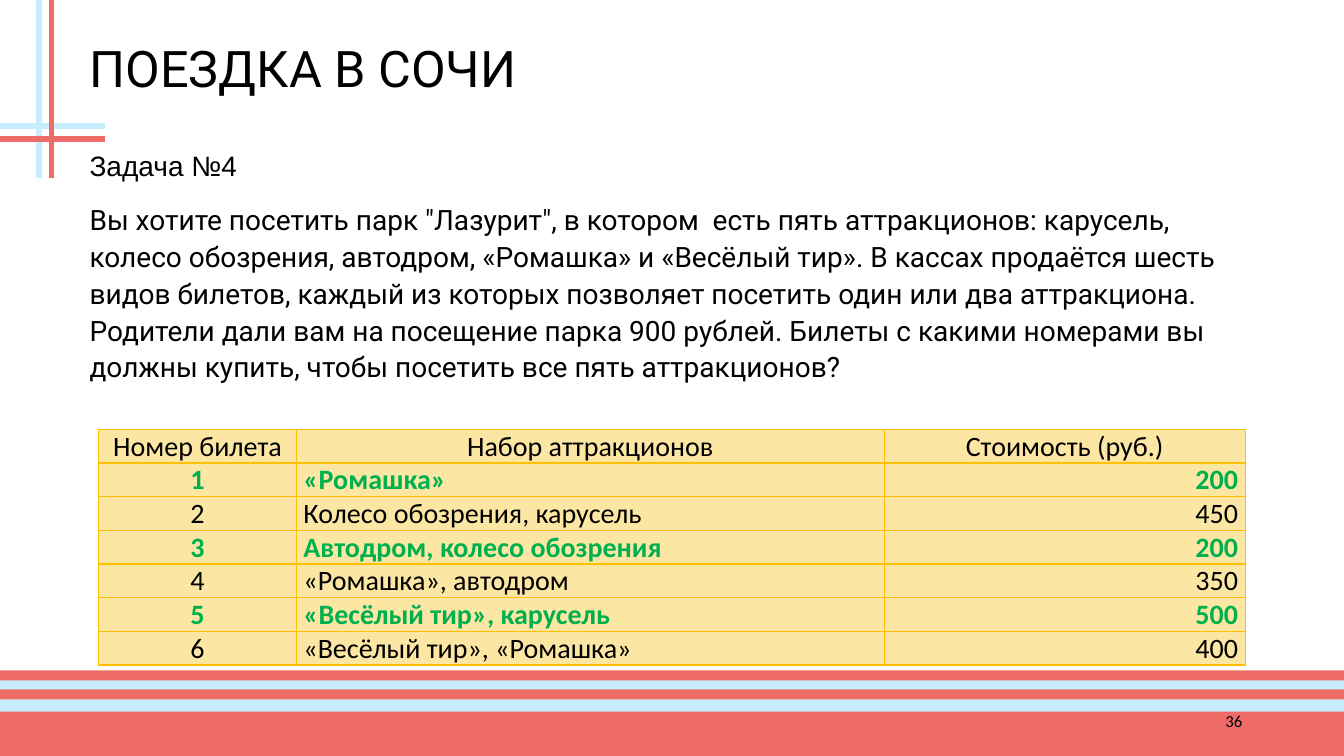
"""Build the slide with the Sochi trip problem and its ticket price table."""
from lxml.etree import SubElement
from pptx import Presentation
from pptx.dml.color import RGBColor
from pptx.enum.shapes import MSO_CONNECTOR, MSO_SHAPE
from pptx.enum.text import MSO_ANCHOR, PP_ALIGN
from pptx.oxml.ns import qn
from pptx.util import Inches, Pt

BLUE, CORAL, BLACK, GREEN = "C6ECFD", "EE6C68", "000000", "00B050"
CELL_FILL, BORDER = "FCE6A3", "FFC000"


def color(value):
    return RGBColor.from_string(value)


def style(paragraph, font_name, size, value=BLACK, bold=False):
    paragraph.font.name = font_name
    paragraph.font.size = Pt(size)
    paragraph.font.color.rgb = color(value)
    paragraph.font.bold = bold


deck = Presentation()
deck.slide_width, deck.slide_height = Inches(13.33), Inches(7.5)
slide = deck.slides.add_slide(deck.slide_layouts[5])

for top, height, fill in [(6.66, 0.84, BLUE), (7.06, 0.44, CORAL),
                          (6.84, 0.1, CORAL), (6.65, 0.1, CORAL)]:
    stripe = slide.shapes.add_shape(
        MSO_SHAPE.RECTANGLE, 0, Inches(top), deck.slide_width, Inches(height))
    stripe.shadow.inherit = False
    stripe.fill.solid()
    stripe.fill.fore_color.rgb = color(fill)
    stripe.line.fill.background()

for x1, y1, x2, y2, line_color in [
        (0, 1.25, 1.04, 1.25, BLUE), (0.39, 0, 0.39, 1.77, BLUE),
        (0, 1.38, 1.04, 1.38, CORAL), (0.51, 0, 0.51, 1.77, CORAL)]:
    ribbon = slide.shapes.add_connector(
        MSO_CONNECTOR.STRAIGHT, Inches(x1), Inches(y1), Inches(x2), Inches(y2))
    ribbon.line.color.rgb = color(line_color)
    ribbon.line.width = Pt(4)
    SubElement(ribbon._element.spPr, qn("a:effectLst"))

page_number = slide.shapes.add_textbox(
    Inches(9.42), Inches(6.95), Inches(3), Inches(0.4)).text_frame
page_number.word_wrap = True
page_number.vertical_anchor = MSO_ANCHOR.MIDDLE
page_number.text = "36"
page_number.paragraphs[0].alignment = PP_ALIGN.RIGHT
style(page_number.paragraphs[0], "Calibri", 12)

title = slide.shapes.title
title.left, title.top = Inches(0.79), Inches(0.39)
title.width, title.height = Inches(11.63), Inches(0.73)
title.text_frame.text = "ПОЕЗДКА В СОЧИ"
title.text_frame.vertical_anchor = MSO_ANCHOR.TOP
heading = title.text_frame.paragraphs[0]
heading.alignment = PP_ALIGN.LEFT
heading.line_spacing = 0.9
style(heading, "Roboto", 36)

problem = slide.shapes.add_textbox(
    Inches(0.79), Inches(1.39), Inches(11.63), Inches(4.61)).text_frame
problem.word_wrap = True
problem.text = "\n".join([
    "Задача №4",
    "Вы хотите посетить парк \"Лазурит\", в котором  есть пять аттракционов: "
    "карусель, колесо обозрения, автодром, «Ромашка» и «Весёлый тир». "
    "В кассах продаётся шесть видов билетов, каждый из которых позволяет "
    "посетить один или два аттракциона.",
    "Родители дали вам на посещение парка 900 рублей. Билеты с какими "
    "номерами вы должны купить, чтобы посетить все пять аттракционов?",
])
for paragraph, font_name in zip(problem.paragraphs, ["Arial", "Roboto", "Roboto"]):
    paragraph.line_spacing = 1.1
    style(paragraph, font_name, 20)
problem.paragraphs[0].space_after = Pt(12)

tickets = [
    ("Номер билета", "Набор аттракционов", "Стоимость (руб.)"),
    ("1", "«Ромашка»", "200"),
    ("2", "Колесо обозрения, карусель", "450"),
    ("3", "Автодром, колесо обозрения", "200"),
    ("4", "«Ромашка», автодром", "350"),
    ("5", "«Весёлый тир», карусель", "500"),
    ("6", "«Весёлый тир», «Ромашка»", "400"),
]
answer = {"1", "3", "5"}
alignments = [PP_ALIGN.CENTER, PP_ALIGN.LEFT, PP_ALIGN.RIGHT]
price_list = slide.shapes.add_table(
    len(tickets), 3, Inches(0.98), Inches(4.26), Inches(11.37), Inches(2.33)).table
for column, width in zip(price_list.columns, [1.96, 5.83, 3.58]):
    column.width = Inches(width)

for row_index, ticket in enumerate(tickets):
    chosen = ticket[0] in answer
    for column_index, text in enumerate(ticket):
        cell = price_list.cell(row_index, column_index)
        cell.margin_left = cell.margin_right = Inches(0.07)
        cell.margin_top = cell.margin_bottom = 0
        cell.text = text
        entry = cell.text_frame.paragraphs[0]
        entry.alignment = alignments[column_index] if row_index else PP_ALIGN.CENTER
        style(entry, "Calibri", 20, GREEN if chosen else BLACK, chosen)
        properties = cell._tc.get_or_add_tcPr()
        for side in ("a:lnL", "a:lnR", "a:lnT", "a:lnB"):
            edge = SubElement(properties, qn(side), w=str(Pt(1)))
            SubElement(SubElement(edge, qn("a:solidFill")), qn("a:srgbClr"), val=BORDER)
        cell.fill.solid()
        cell.fill.fore_color.rgb = color(CELL_FILL)

deck.save("out.pptx")
